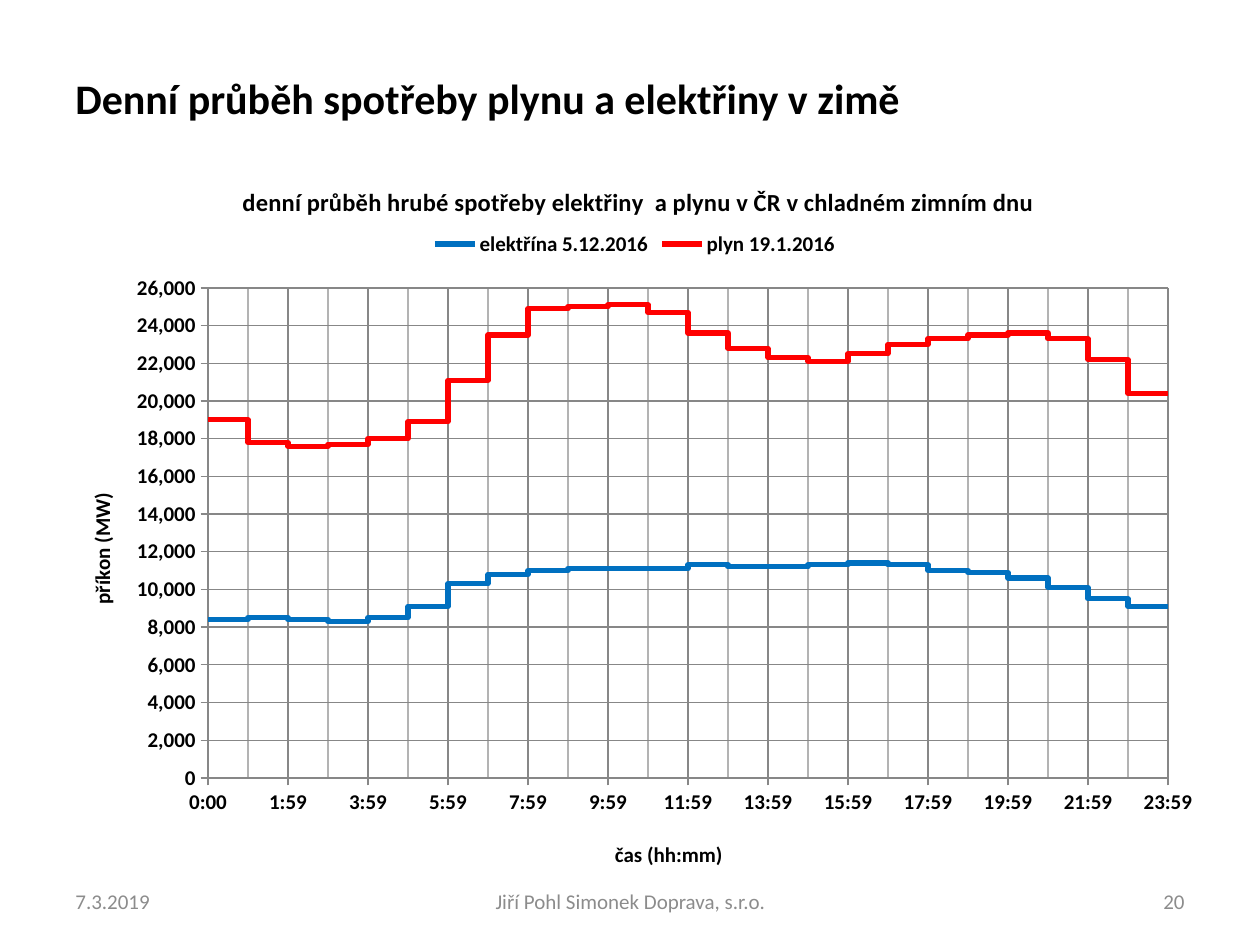
import copy
from dataclasses import dataclass

import pptx
import pptx.chart.data
import pptx.dml.color
import pptx.enum.chart
import pptx.enum.text
import pptx.oxml
import pptx.oxml.ns
import pptx.util

EMU_PER_PX = 914400 / 126
FONT = "Calibri"
BLACK, GREY, GRID, MINOR_GRID = "000000", "8C8C8C", "878787", "B3B3B3"
ALIGN = pptx.enum.text.PP_ALIGN


@dataclass(frozen=True)
class Box:
    left: int
    top: int
    width: int
    height: int


@dataclass(frozen=True)
class Caption:
    text: str
    box: Box
    align: ALIGN
    size: int = 12
    color: str = GREY
    bold: bool = False


@dataclass(frozen=True)
class Consumption:
    name: str
    color: str
    hourly_mw: tuple[int, ...]


@dataclass(frozen=True)
class Axis:
    title: str
    title_box: Box
    number_format: str
    settings: dict


CAPTIONS = (
    Caption("Denní průběh spotřeby plynu a elektřiny v zimě", Box(63, 0, 1134, 195),
            ALIGN.LEFT, 24, BLACK, True),
    Caption("7.3.2019", Box(63, 876, 294, 50), ALIGN.LEFT),
    Caption("Jiří Pohl Simonek Doprava, s.r.o.", Box(431, 876, 399, 50), ALIGN.CENTER),
    Caption("20", Box(903, 876, 294, 50), ALIGN.RIGHT),
)

CONSUMPTIONS = (
    Consumption("elektřína 5.12.2016", "0070C0", (
        8400, 8500, 8400, 8300, 8500, 9100, 10300, 10800, 11000, 11100, 11100, 11100,
        11300, 11200, 11200, 11300, 11400, 11300, 11000, 10900, 10600, 10100, 9500, 9100)),
    Consumption("plyn 19.1.2016", "FF0000", (
        19000, 17800, 17600, 17700, 18000, 18900, 21100, 23500, 24900, 25000, 25100, 24700,
        23600, 22800, 22300, 22100, 22500, 23000, 23300, 23500, 23600, 23300, 22200, 20400)),
)

CHART_TITLE = "denní průběh hrubé spotřeby elektřiny  a plynu v ČR v chladném zimním dnu"
CHART_BOX = Box(54, 152, 1160, 737)
PLOT_BOX = Box(208, 288, 960, 490)
LEGEND_BOX = Box(428, 229, 414, 30)
CHART_TITLE_BOX = Box(238, 180, 791, 30)

# A step just under two hours makes the time labels read 1:59, 3:59 and so on.
TIME_AXIS = Axis("čas (hh:mm)", Box(611, 836, 107, 26), "h:mm", {
    "minimum_scale": 0, "maximum_scale": 1, "major_unit": 0.083333,
    "minor_unit": 0.0416665, "has_minor_gridlines": True})
POWER_AXIS = Axis("příkon (MW)", Box(84, 489, 26, 112), "#,##0", {
    "minimum_scale": 0, "maximum_scale": 26000, "major_unit": 2000,
    "has_minor_gridlines": False})


def px(length: int) -> int:
    return round(length * EMU_PER_PX)


def rgb(color: str) -> pptx.dml.color.RGBColor:
    return pptx.dml.color.RGBColor.from_string(color)


def style_font(font, size: int, color: str = BLACK, bold: bool = True) -> None:
    values = {"name": FONT, "size": pptx.util.Pt(size), "bold": bold}
    for attribute, value in values.items():
        setattr(font, attribute, value)
    font.color.rgb = rgb(color)


def style_line(line, color: str, width: float) -> None:
    line.color.rgb = rgb(color)
    line.width = pptx.util.Pt(width)


def style_minor_gridlines(axis) -> None:
    """Copy the look of the major gridlines in the lighter colour."""
    qn = pptx.oxml.ns.qn
    major = axis._element.find(qn("c:majorGridlines"))
    minor = axis._element.find(qn("c:minorGridlines"))
    look = copy.deepcopy(major.find(qn("c:spPr")))
    for color in look.iter(qn("a:srgbClr")):
        color.set("val", MINOR_GRID)
    minor.append(look)


def add_caption(slide, caption: Caption) -> None:
    box = caption.box
    frame = slide.shapes.add_textbox(
        px(box.left), px(box.top), px(box.width), px(box.height)).text_frame
    frame.word_wrap = True
    frame.vertical_anchor = pptx.enum.text.MSO_ANCHOR.MIDDLE
    paragraph = frame.paragraphs[0]
    paragraph.alignment = caption.align
    run = paragraph.add_run()
    run.text = caption.text
    style_font(run.font, caption.size, caption.color, caption.bold)


def place(element, box: Box, index: int, inner: bool = False, sized: bool = True) -> None:
    """Give a chart part a fixed place, as child number index of its element."""
    for old in element.findall(pptx.oxml.ns.qn("c:layout")):
        element.remove(old)
    settings = {"layoutTarget": "inner"} if inner else {}
    settings |= {
        "xMode": "edge", "yMode": "edge",
        "x": round((box.left - CHART_BOX.left) / CHART_BOX.width, 4),
        "y": round((box.top - CHART_BOX.top) / CHART_BOX.height, 4)}
    if sized:
        settings |= {"w": round(box.width / CHART_BOX.width, 4),
                     "h": round(box.height / CHART_BOX.height, 4)}
    children = "".join(f'<c:{tag} val="{value}"/>' for tag, value in settings.items())
    element.insert(index, pptx.oxml.parse_xml(
        f'<c:layout {pptx.oxml.ns.nsdecls("c")}>'
        f'<c:manualLayout>{children}</c:manualLayout></c:layout>'))


def set_title(title, text: str, size: int, box: Box) -> None:
    run = title.text_frame.paragraphs[0].add_run()
    run.text = text
    style_font(run.font, size)
    place(title._element, box, 1, sized=False)


def format_axis(axis, spec: Axis) -> None:
    settings = {
        "has_major_gridlines": True,
        "major_tick_mark": pptx.enum.chart.XL_TICK_MARK.OUTSIDE,
        "minor_tick_mark": pptx.enum.chart.XL_TICK_MARK.NONE,
    } | spec.settings
    for attribute, value in settings.items():
        setattr(axis, attribute, value)
    style_line(axis.format.line, GRID, 0.75)
    style_line(axis.major_gridlines.format.line, GRID, 0.75)
    if axis.has_minor_gridlines:
        style_minor_gridlines(axis)
    labels = axis.tick_labels
    labels.number_format = spec.number_format
    labels.number_format_is_linked = False
    style_font(labels.font, 12)
    set_title(axis.axis_title, spec.title, 12, spec.title_box)


def add_consumption_chart(slide) -> None:
    data = pptx.chart.data.XyChartData()
    for consumption in CONSUMPTIONS:
        steps = data.add_series(consumption.name)
        for hour, power in enumerate(consumption.hourly_mw):
            for edge in (hour, hour + 1):
                steps.add_data_point(edge / 24, power)
    box = CHART_BOX
    chart = slide.shapes.add_chart(
        pptx.enum.chart.XL_CHART_TYPE.XY_SCATTER_LINES_NO_MARKERS,
        px(box.left), px(box.top), px(box.width), px(box.height), data).chart
    style_font(chart.font, 10, bold=False)
    set_title(chart.chart_title, CHART_TITLE, 14, CHART_TITLE_BOX)

    chart.has_legend = True
    chart.legend.position = pptx.enum.chart.XL_LEGEND_POSITION.TOP
    chart.legend.include_in_layout = False
    style_font(chart.legend.font, 12)
    place(chart.legend._element, LEGEND_BOX, 1)

    format_axis(chart.category_axis, TIME_AXIS)
    format_axis(chart.value_axis, POWER_AXIS)
    power_title = chart.value_axis.axis_title.text_frame._txBody.bodyPr
    power_title.set("rot", "-5400000")
    power_title.set("vert", "horz")

    plot = chart.plots[0]
    plot.vary_by_categories = False
    for series, consumption in zip(plot.series, CONSUMPTIONS):
        series.smooth = False
        series.marker.style = pptx.enum.chart.XL_MARKER_STYLE.NONE
        style_line(series.format.line, consumption.color, 3)
    place(chart._chartSpace.chart.plotArea, PLOT_BOX, 0, inner=True)


def main() -> None:
    deck = pptx.Presentation()
    deck.slide_width, deck.slide_height = px(1260), px(945)
    slide = deck.slides.add_slide(deck.slide_layouts[6])
    add_consumption_chart(slide)
    for caption in CAPTIONS:
        add_caption(slide, caption)
    deck.save("out.pptx")


if __name__ == "__main__":
    main()
